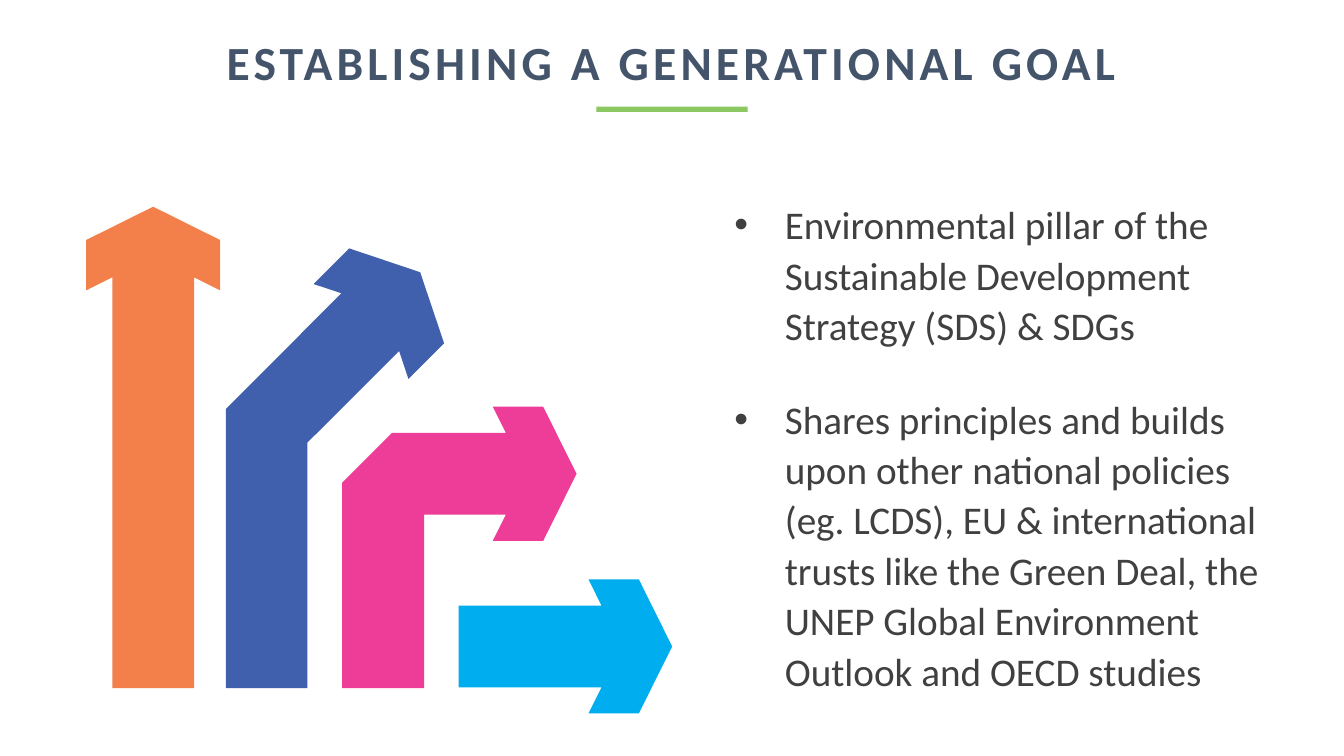
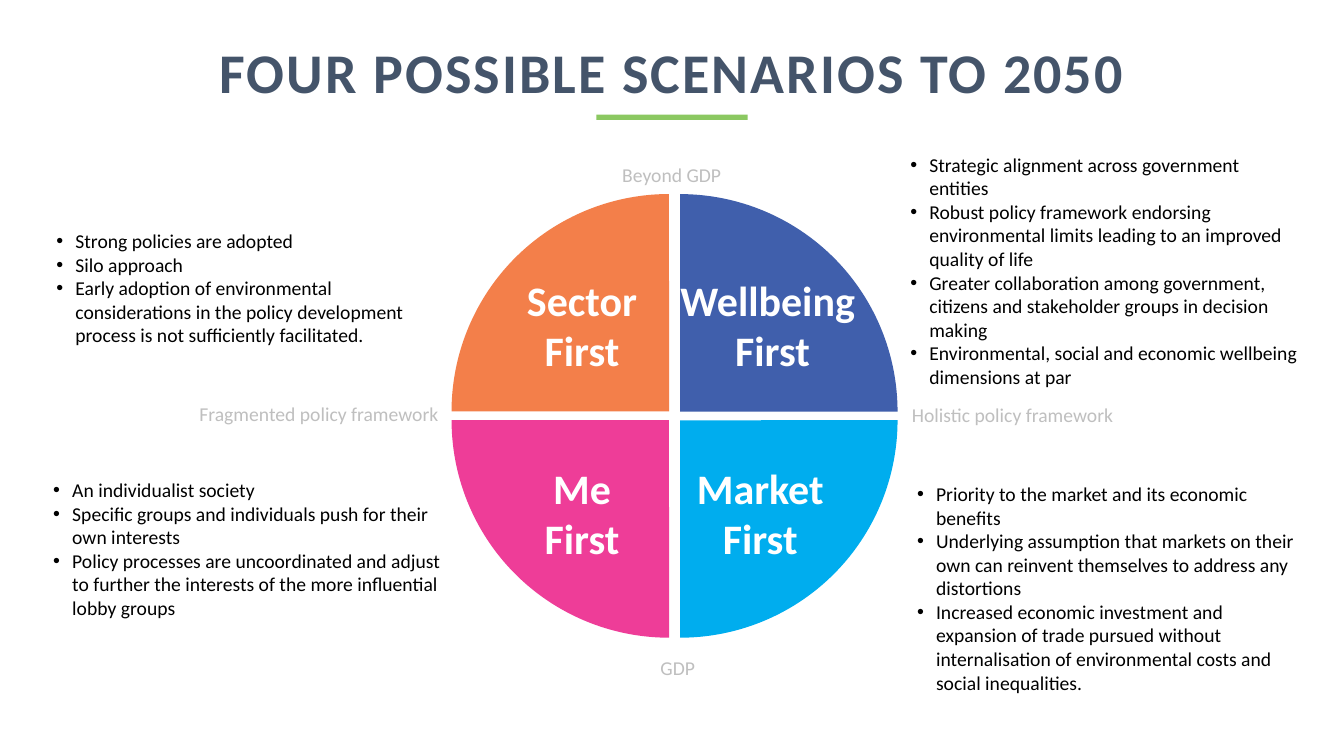
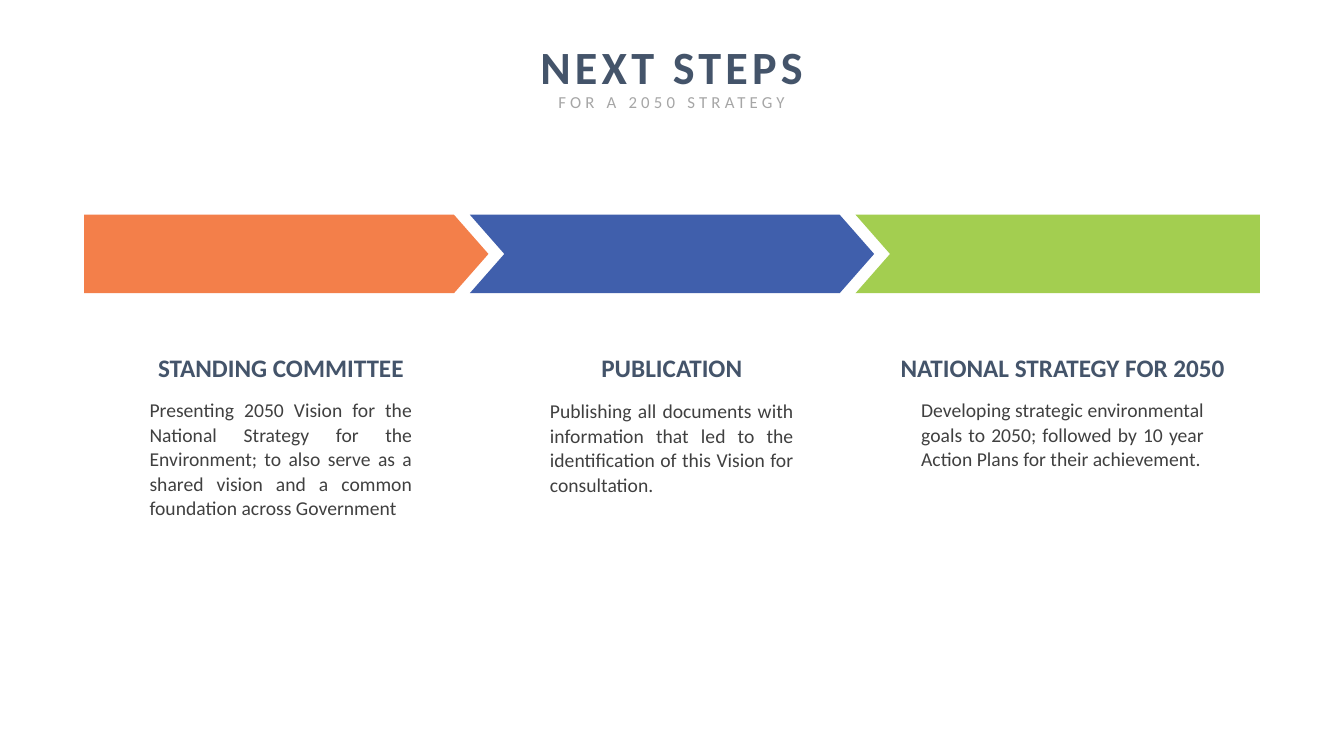
from math import cos, radians, sin

from lxml.etree import SubElement
from pptx import Presentation
from pptx.dml.color import RGBColor
from pptx.enum.shapes import MSO_SHAPE
from pptx.enum.text import MSO_ANCHOR, MSO_AUTO_SIZE, PP_ALIGN
from pptx.oxml.ns import qn
from pptx.util import Cm, Pt

FONT = "Calibri"
COLORS = {
    "title": "44546A",
    "body": "404040",
    "black": "000000",
    "white": "FFFFFF",
    "axis": "BFBFBF",
    "subtitle": "A6A6A6",
    "rule": "8BC861",
    "orange": "F37F4A",
    "blue": "405FAC",
    "pink": "EE3D98",
    "cyan": "00ADEE",
    "green": "A3CE50",
}
CENTER = 16.93


def color(name):
    return RGBColor.from_string(COLORS[name])


def place(shape, left, top, width, height):
    shape.left, shape.top = Cm(left), Cm(top)
    shape.width, shape.height = Cm(width), Cm(height)
    return shape


def add_bullet(paragraph, indent):
    properties = paragraph._p.get_or_add_pPr()
    properties.set("marL", str(Cm(indent)))
    properties.set("indent", str(-Cm(indent)))
    SubElement(properties, qn("a:buFont")).set("typeface", "Arial")
    SubElement(properties, qn("a:buChar")).set("char", "•")


def write(shape, paragraphs, size, ink, bold=False, align=PP_ALIGN.LEFT, tracking=0,
          bullet=None, line=1.0, before=0, after=0, anchor=MSO_ANCHOR.TOP,
          wrap=True, inset=(0.25, 0.13)):
    """Fill a shape with paragraphs; tracking is in points, bullet and inset in cm."""
    frame = shape.text_frame
    frame.auto_size = MSO_AUTO_SIZE.NONE
    frame.word_wrap = wrap
    frame.vertical_anchor = anchor
    frame.margin_left = frame.margin_right = Cm(inset[0])
    frame.margin_top = frame.margin_bottom = Cm(inset[1])
    frame.text = "\n".join(paragraphs)
    for paragraph in frame.paragraphs:
        paragraph.alignment = align
        paragraph.line_spacing = line
        paragraph.space_before, paragraph.space_after = Pt(before), Pt(after)
        if bullet:
            add_bullet(paragraph, bullet)
        for run in paragraph.runs:
            run.font.name, run.font.size, run.font.bold = FONT, Pt(size), bold
            run.font.color.rgb = color(ink)
            if tracking:
                run.font._element.set("spc", str(int(tracking * 100)))


def add_text(slide, box, paragraphs, **text_format):
    left, top, width, height = (Cm(length) for length in box)
    write(slide.shapes.add_textbox(left, top, width, height), paragraphs, **text_format)


def add_centered(slide, center, top, width, height, paragraphs, **text_format):
    add_text(slide, (center - width / 2, top, width, height), paragraphs,
             align=PP_ALIGN.CENTER, **text_format)


def paint(shape, fill):
    shape.shadow.inherit = False
    shape.fill.solid()
    shape.fill.fore_color.rgb = color(fill)
    shape.line.fill.background()


def add_outline(slide, points, fill):
    corners = [(Cm(x), Cm(y)) for x, y in points]
    builder = slide.shapes.build_freeform(*corners[0])
    builder.add_line_segments(corners[1:], close=True)
    outline = builder.convert_to_shape()
    paint(outline, fill)
    return outline


def add_arrow(slide, tip, angle, tail, fill):
    """Draw the shared arrowhead, turned clockwise by angle, and join it to the tail."""
    half_head = [(-1.78, 1.03), (-2.11, 1.69), (-0.84, 1.69)]
    head = [(along, -across) for along, across in half_head] + [(0, 0)] + half_head[::-1]
    turn = radians(angle)
    turned = [(tip[0] + along * cos(turn) - across * sin(turn),
               tip[1] + along * sin(turn) + across * cos(turn)) for along, across in head]
    add_outline(slide, turned + tail, fill)


def polar(origin, distance, angle):
    return (origin[0] + distance * cos(radians(angle)),
            origin[1] + distance * sin(radians(angle)))


def add_quadrant(slide, side_x, side_y, bulge, rotation, fill):
    """Draw a quarter disc that bulges at one angle and is then rotated into its place."""
    radius = 5.48
    corner = (17 + side_x * 0.14, 10.48 + side_y * 0.11)
    middle = polar(corner, radius / 2, bulge + rotation)
    apex = polar(middle, -radius / 2, bulge)
    rim = [polar(apex, radius, bulge + offset) for offset in (-45, 0, 45)]
    quadrant = add_outline(slide, [apex] + rim, fill)
    quadrant.rotation = rotation
    round_rim(quadrant, radius, (bulge - 45) % 360)


def round_rim(quadrant, radius, start):
    """Replace the two straight rim segments by one quarter arc."""
    first, peak, end = quadrant._element.findall(".//" + qn("a:lnTo"))
    outline = first.getparent()
    outline.remove(peak)
    arc = SubElement(outline, qn("a:arcTo"))
    outline.replace(end, arc)
    for name, value in (("wR", Cm(radius)), ("hR", Cm(radius)),
                        ("stAng", start * 60000), ("swAng", 90 * 60000)):
        arc.set(name, str(value))


def add_band(slide, left, fill, notched, pointed):
    top, width, height, depth = 5.41, 10.19, 1.98, 0.87
    right, middle, bottom = left + width, top + height / 2, top + height
    shoulder = right - depth if pointed else right
    tip = [(right, middle)] if pointed else []
    notch = [(left + depth, middle)] if notched else []
    add_outline(slide, [(left, top), (shoulder, top), *tip, (shoulder, bottom),
                        (left, bottom), *notch], fill)


def add_slide(deck, layout, title, top, width, height, size, tracking, rule_top=None):
    slide = deck.slides.add_slide(deck.slide_layouts[layout])
    place(slide.shapes.title, CENTER - width / 2, top, width, height)
    write(slide.shapes.title, [title], size=size, ink="title", bold=True, tracking=tracking,
          align=PP_ALIGN.CENTER, wrap=False)
    if rule_top:
        rule = slide.shapes.add_shape(MSO_SHAPE.RECTANGLE, Cm(15.03), Cm(rule_top),
                                      Cm(3.81), Cm(0.13))
        paint(rule, "rule")
    return slide


def add_goal_slide(deck):
    slide = add_slide(deck, 1, "ESTABLISHING A GENERATIONAL GOAL", 0.71, 23.29, 1.7,
                      size=34, tracking=3, rule_top=2.69)
    ground = 17.34
    add_arrow(slide, (3.86, 5.21), -90, [(4.89, ground), (2.83, ground)], "orange")
    add_arrow(slide, (10.59, 6.86), -45,
              [(7.75, 11.15), (7.75, ground), (5.69, ground), (5.69, 10.31)], "blue")
    add_arrow(slide, (14.53, 11.94), 0,
              [(10.69, 12.97), (10.69, ground), (8.62, ground), (8.62, 12.17), (9.88, 10.91)],
              "pink")
    add_arrow(slide, (16.94, 16.29), 0, [(11.56, 17.32), (11.56, 15.26)], "cyan")
    goals = [
        "Environmental pillar of the Sustainable Development Strategy (SDS) & SDGs",
        "Shares principles and builds upon other national policies (eg. LCDS), EU & "
        "international trusts like the Green Deal, the UNEP Global Environment Outlook "
        "and OECD studies",
    ]
    write(place(slide.placeholders[1], 18.26, 4.84, 14.38, 12.85), goals,
          size=28, ink="body", bullet=1.27, line=1.07, after=31)


def add_scenarios_slide(deck):
    slide = add_slide(deck, 4, "FOUR POSSIBLE SCENARIOS TO 2050", 0.81, 23.57, 1.96,
                      size=40, tracking=1.5, rule_top=2.89)
    upper, lower = 6.77, 11.51
    quadrants = [
        (-1, 1, 90, 45, "pink"),
        (1, -1, 90, 225, "blue"),
        (1, 1, 0, 45, "cyan"),
        (-1, -1, 180, 45, "orange"),
    ]
    for quadrant in quadrants:
        add_quadrant(slide, *quadrant)
    scenarios = [
        ("Sector", 14.67, upper, 3.3, (1.12, 5.62, 10.39, 3.3), [
            "Strong policies are adopted",
            "Silo approach",
            "Early adoption of environmental considerations in the policy development "
            "process is not sufficiently facilitated."]),
        ("Wellbeing ", 19.47, upper, 5.2, (22.64, 3.7, 10.39, 6.96), [
            "Strategic alignment across government entities",
            "Robust policy framework endorsing environmental limits leading to an improved "
            "quality of life",
            "Greater collaboration among government, citizens and stakeholder groups in "
            "decision making",
            "Environmental, social and economic wellbeing dimensions at par"]),
        ("Me", 14.67, lower, 2.41, (1.04, 11.9, 10.39, 3.89), [
            "An individualist society",
            "Specific groups and individuals push for their own interests",
            "Policy processes are uncoordinated and adjust to further the interests of the "
            "more influential lobby groups"]),
        ("Market", 19.16, lower, 3.73, (22.81, 12, 10.39, 5.69), [
            "Priority to the market and its economic benefits",
            "Underlying assumption that markets on their own can reinvent themselves to "
            "address any distortions",
            "Increased economic investment and expansion of trade pursued without "
            "internalisation of environmental costs and social inequalities."]),
    ]
    for number, scenario in enumerate(scenarios, start=1):
        name, center, top, width, list_box, features = scenario
        add_centered(slide, center, top, width, 2.82, [name, "First"], size=30, ink="white",
                     bold=True, anchor=MSO_ANCHOR.MIDDLE, wrap=False)
        write(place(slide.placeholders[number], *list_box), features,
              size=14, ink="black", bullet=0.48, inset=(0.3, 0.15))
    axis_ends = [
        ("Beyond GDP", 16.93, 3.97, 4.27),
        ("GDP", 17.08, 16.41, 4.27),
        ("Holistic policy framework", 25.52, 10.03, 6.38),
        ("Fragmented policy framework", 8.04, 10.01, 8),
    ]
    for label, center, top, width in axis_ends:
        add_centered(slide, center, top, width, 0.86, [label], size=14, ink="axis")


def add_steps_slide(deck):
    slide = add_slide(deck, 5, "NEXT STEPS", 0.84, 7.32, 1.68, size=33, tracking=3)
    add_centered(slide, CENTER, 2.18, 6.4, 0.76, ["FOR A 2050 STRATEGY"],
                 size=12, ink="subtitle", tracking=3, wrap=False)
    steps = [
        ("STANDING COMMITTEE", "orange", 6.76, 9.93, 6.88, 3.33,
         "Presenting 2050 Vision for the National Strategy for the Environment; to also "
         "serve as a shared vision and a common foundation across Government"),
        ("PUBLICATION", "blue", 4.09, 9.95, 6.4, 2.69,
         "Publishing all documents with information that led to the identification of this "
         "Vision for consultation."),
        ("NATIONAL STRATEGY FOR 2050", "green", 8.76, 9.93, 7.39, 2.06,
         "Developing strategic environmental goals to 2050; followed by 10 year Action "
         "Plans for their achievement."),
    ]
    last = len(steps) - 1
    for index, (heading, fill, heading_width, top, width, height, detail) in enumerate(steps):
        center = CENTER + (index - 1) * 9.85
        add_band(slide, 2.12 + index * 9.72, fill, notched=index > 0, pointed=index < last)
        add_centered(slide, center, 8.74, heading_width, 1.02, [heading], size=18,
                     ink="title", bold=True, anchor=MSO_ANCHOR.MIDDLE, wrap=False)
        add_text(slide, (center - width / 2, top, width, height), [detail], size=14,
                 ink="body", align=PP_ALIGN.JUSTIFY, line=Pt(17.5), before=2.8,
                 inset=(0.13, 0.08))


def main():
    deck = Presentation()
    deck.slide_width, deck.slide_height = Cm(33.87), Cm(19.05)
    add_goal_slide(deck)
    add_scenarios_slide(deck)
    add_steps_slide(deck)
    deck.save("out.pptx")


if __name__ == "__main__":
    main()
